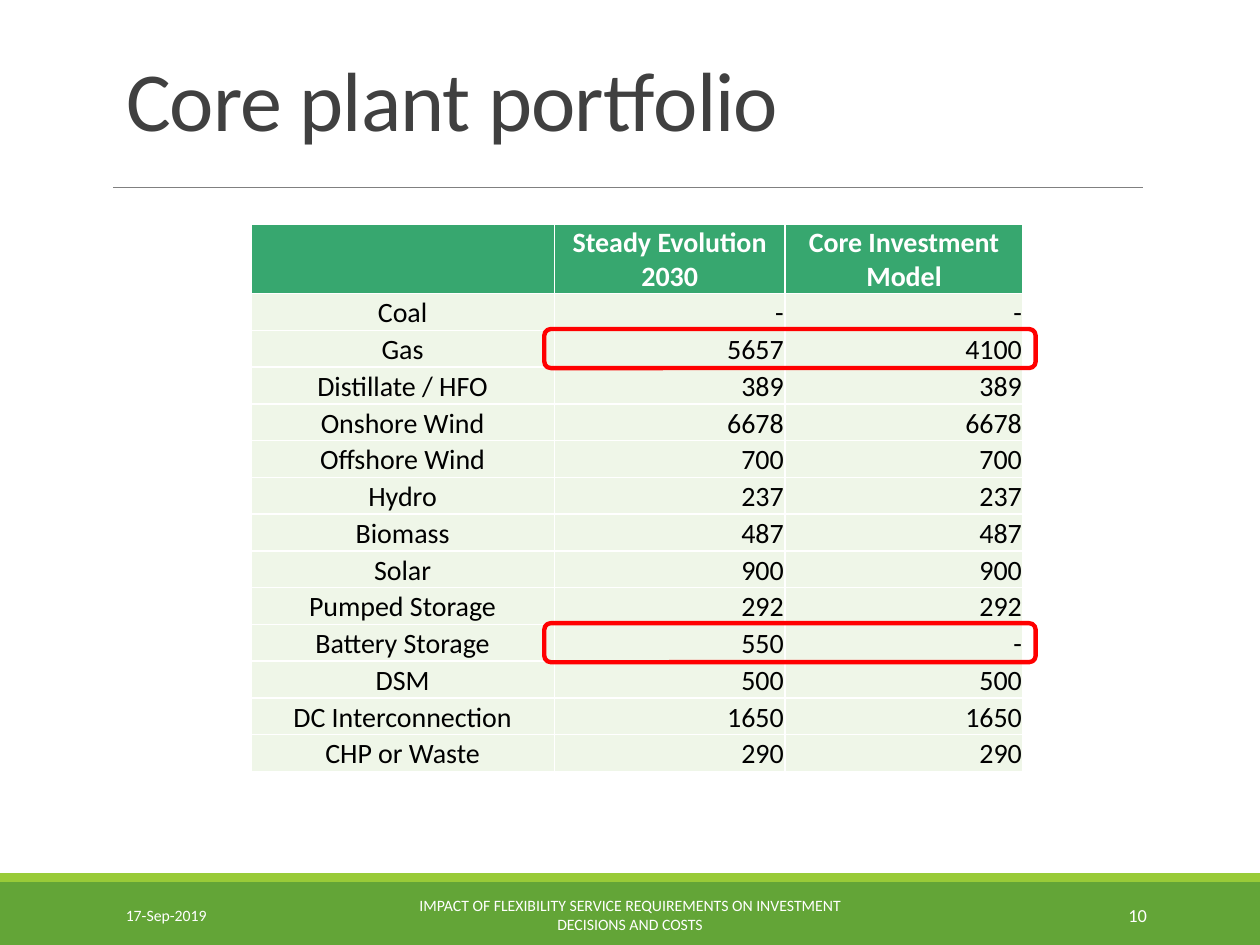
from dataclasses import dataclass

from lxml.etree import SubElement
from pptx import Presentation
from pptx.dml.color import RGBColor
from pptx.enum.shapes import MSO_CONNECTOR, MSO_SHAPE
from pptx.enum.text import MSO_ANCHOR, MSO_AUTO_SIZE, PP_ALIGN
from pptx.oxml.ns import qn
from pptx.util import Inches, Pt

SLIDE_WIDTH, SLIDE_HEIGHT = Inches(10), Inches(7.5)
FONT = "Calibri"
WHITE = RGBColor(0xFF, 0xFF, 0xFF)
BLACK = RGBColor(0, 0, 0)
RED = RGBColor(0xFF, 0, 0)
GRAY = RGBColor(0x80, 0x80, 0x80)
TITLE_COLOR = RGBColor(0x40, 0x40, 0x40)
FOOTER_GREEN = RGBColor(0x63, 0xA5, 0x37)
STRIPE_GREEN = RGBColor(0x99, 0xCB, 0x38)
HEADER_GREEN = RGBColor(0x37, 0xA7, 0x6F)
BODY_GREEN = RGBColor(0xEF, 0xF6, 0xE8)


def across(percent: float) -> int:
    return round(SLIDE_WIDTH * percent / 100)


def down(percent: float) -> int:
    return round(SLIDE_HEIGHT * percent / 100)


@dataclass(frozen=True)
class Box:
    """Position and size in percent of the slide."""
    left: float
    top: float
    width: float
    height: float

    def lengths(self) -> tuple[int, int, int, int]:
        return across(self.left), down(self.top), across(self.width), down(self.height)


@dataclass(frozen=True)
class FooterText:
    text: str
    left: float
    width: float
    size: float
    alignment: PP_ALIGN


@dataclass(frozen=True)
class Plant:
    name: str
    steady_evolution: str
    core_model: str


TITLE_BOX = Box(9, 4.13, 82.5, 12.27)
FOOTER_BAND = Box(0, 93.33, 100, 6.67)
FOOTER_STRIPE = Box(0, 92.4, 100, 0.93)
FOOTER_TEXTS = [
    FooterText("17-Sep-2019", 9, 20.3, 9, PP_ALIGN.LEFT),
    FooterText("IMPACT OF FLEXIBILITY SERVICE REQUIREMENTS ON INVESTMENT DECISIONS AND COSTS",
               30.2, 39.6, 9, PP_ALIGN.CENTER),
    FooterText("10", 81.2, 10.8, 10.5, PP_ALIGN.RIGHT),
]

TABLE_LEFT, TABLE_TOP = 19.9, 23.73
COLUMN_WIDTHS = [24.1, 18.3, 18.9]
HEADER_HEIGHT, ROW_HEIGHT = 7.33, 3.89
HEADERS = ["", "Steady Evolution\n2030", "Core Investment Model"]
PLANTS = [
    Plant("Coal", "-", "-"),
    Plant("Gas", "5657", "4100"),
    Plant("Distillate / HFO", "389", "389"),
    Plant("Onshore Wind", "6678", "6678"),
    Plant("Offshore Wind", "700", "700"),
    Plant("Hydro", "237", "237"),
    Plant("Biomass", "487", "487"),
    Plant("Solar", "900", "900"),
    Plant("Pumped Storage", "292", "292"),
    Plant("Battery Storage", "550", "-"),
    Plant("DSM", "500", "500"),
    Plant("DC Interconnection", "1650", "1650"),
    Plant("CHP or Waste", "290", "290"),
]
HIGHLIGHTED = ("Gas", "Battery Storage")


def format_paragraph(paragraph, size: float, color: RGBColor, alignment: PP_ALIGN,
                     bold: bool = False) -> None:
    paragraph.alignment = alignment
    font = paragraph.font
    font.name, font.size, font.bold = FONT, Pt(size), bold
    font.color.rgb = color


def add_band(slide, box: Box, color: RGBColor) -> None:
    shape = slide.shapes.add_shape(MSO_SHAPE.RECTANGLE, *box.lengths())
    shape.shadow.inherit = False
    shape.fill.solid()
    shape.fill.fore_color.rgb = color
    shape.line.fill.background()


def add_title_rule(slide) -> None:
    height = down(19.87)
    rule = slide.shapes.add_connector(MSO_CONNECTOR.STRAIGHT, across(9), height,
                                      across(90.7), height)
    rule.line.color.rgb = GRAY
    rule.line.width = Pt(0.5)
    SubElement(rule._element.spPr, qn("a:effectLst"))


def set_title(slide, text: str) -> None:
    title = slide.shapes.title
    title.left, title.top, title.width, title.height = TITLE_BOX.lengths()
    frame = title.text_frame
    frame.text = text
    frame.auto_size = MSO_AUTO_SIZE.NONE
    frame.vertical_anchor = MSO_ANCHOR.BOTTOM
    paragraph = frame.paragraphs[0]
    paragraph.line_spacing = 0.85
    format_paragraph(paragraph, 48, TITLE_COLOR, PP_ALIGN.LEFT)
    paragraph.runs[0]._r.get_or_add_rPr().set("spc", "-50")


def add_footer_text(slide, item: FooterText) -> None:
    box = Box(item.left, 94.13, item.width, 5.33)
    frame = slide.shapes.add_textbox(*box.lengths()).text_frame
    frame.word_wrap = True
    frame.vertical_anchor = MSO_ANCHOR.MIDDLE
    frame.text = item.text
    format_paragraph(frame.paragraphs[0], item.size, WHITE, item.alignment)


def add_cell_borders(cell) -> None:
    properties = cell._tc.get_or_add_tcPr()
    for side in ("lnL", "lnR", "lnT", "lnB"):
        line = SubElement(properties, qn(f"a:{side}"), w=str(Pt(1)))
        fill = SubElement(line, qn("a:solidFill"))
        SubElement(fill, qn("a:srgbClr"), val=str(WHITE))


def fill_cell(cell, text: str, is_header: bool, alignment: PP_ALIGN) -> None:
    add_cell_borders(cell)
    cell.fill.solid()
    cell.fill.fore_color.rgb = HEADER_GREEN if is_header else BODY_GREEN
    cell.margin_left = cell.margin_right = cell.margin_top = Inches(0.01)
    cell.margin_bottom = 0
    cell.vertical_anchor = MSO_ANCHOR.BOTTOM
    cell.text = text
    for paragraph in cell.text_frame.paragraphs:
        format_paragraph(paragraph, 16, WHITE if is_header else BLACK, alignment, is_header)


def add_portfolio_table(slide) -> None:
    rows = [HEADERS] + [[plant.name, plant.steady_evolution, plant.core_model]
                        for plant in PLANTS]
    box = Box(TABLE_LEFT, TABLE_TOP, sum(COLUMN_WIDTHS),
              HEADER_HEIGHT + ROW_HEIGHT * len(PLANTS))
    table = slide.shapes.add_table(len(rows), len(HEADERS), *box.lengths()).table
    table.horz_banding = False
    for column, width in zip(table.columns, COLUMN_WIDTHS):
        column.width = across(width)
    for row_index, values in enumerate(rows):
        is_header = row_index == 0
        table.rows[row_index].height = down(HEADER_HEIGHT if is_header else ROW_HEIGHT)
        for column_index, value in enumerate(values):
            centered = is_header or column_index == 0
            fill_cell(table.cell(row_index, column_index), value, is_header,
                      PP_ALIGN.CENTER if centered else PP_ALIGN.RIGHT)


def add_highlight(slide, row_index: int) -> None:
    top = TABLE_TOP + HEADER_HEIGHT + row_index * ROW_HEIGHT - 0.13
    shape = slide.shapes.add_shape(MSO_SHAPE.ROUNDED_RECTANGLE,
                                   *Box(43.2, top, 39, 4.13).lengths())
    shape.shadow.inherit = False
    shape.fill.background()
    shape.line.color.rgb = RED
    shape.line.width = Pt(2.5)


def main() -> None:
    presentation = Presentation()
    presentation.slide_width, presentation.slide_height = SLIDE_WIDTH, SLIDE_HEIGHT
    slide = presentation.slides.add_slide(presentation.slide_layouts[5])
    add_band(slide, FOOTER_BAND, FOOTER_GREEN)
    add_band(slide, FOOTER_STRIPE, STRIPE_GREEN)
    add_title_rule(slide)
    set_title(slide, "Core plant portfolio")
    for item in FOOTER_TEXTS:
        add_footer_text(slide, item)
    add_portfolio_table(slide)
    for row_index, plant in enumerate(PLANTS):
        if plant.name in HIGHLIGHTED:
            add_highlight(slide, row_index)
    presentation.save("out.pptx")


if __name__ == "__main__":
    main()
